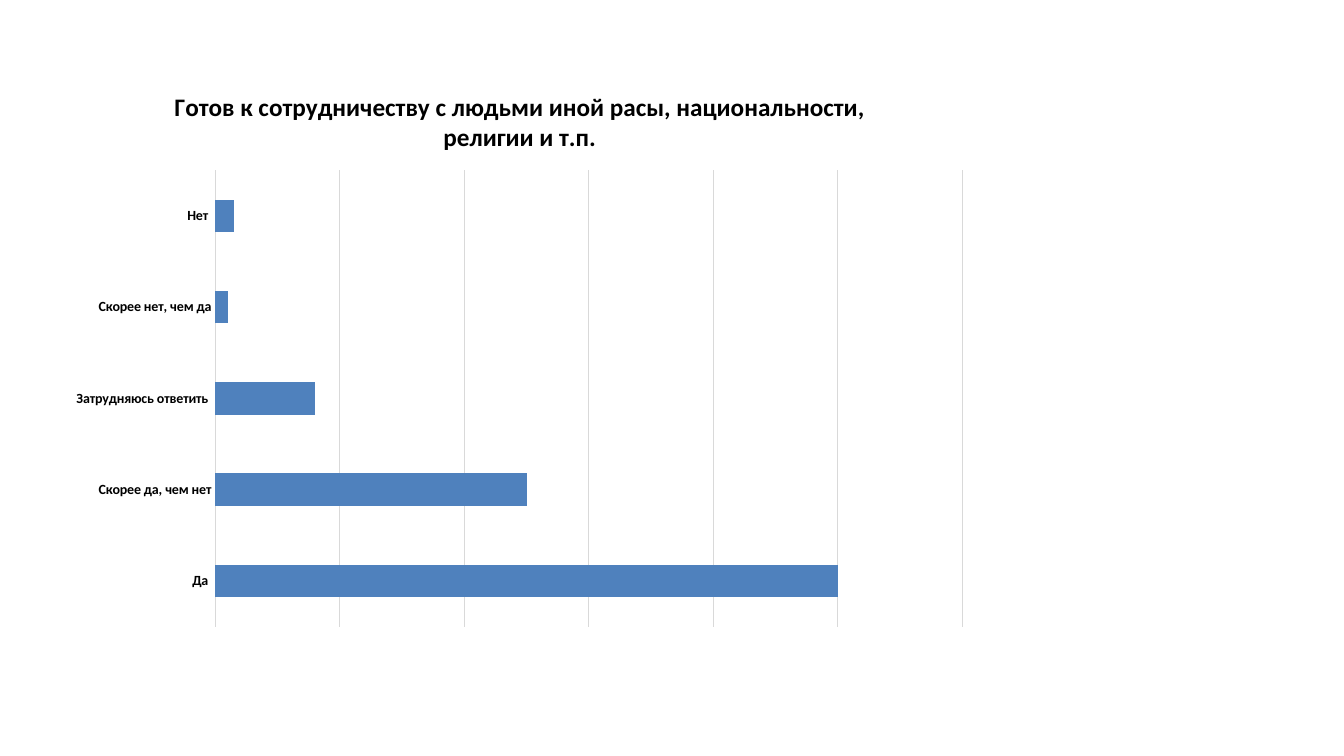
from lxml import etree
from pptx import Presentation
from pptx.chart.data import CategoryChartData
from pptx.dml.color import RGBColor
from pptx.enum import chart as ch
from pptx.oxml import ns
from pptx.util import Inches, Pt

FONT = "Calibri"
BLACK = RGBColor(0x00, 0x00, 0x00)
GRID_GREY = RGBColor(0xD9, 0xD9, 0xD9)
BAR_BLUE = RGBColor(0x4F, 0x81, 0xBD)

QUESTION = ("Готов к сотрудничеству с людьми иной расы, национальности, "
            "религии и т.п.")
ANSWERS = {
    "Да ": 100,
    "Скорее да, чем нет": 50,
    "Затрудняюсь ответить ": 16,
    "Скорее нет, чем да": 2,
    "Нет ": 3,
}


def style_font(font, size, bold=False):
    font.name = FONT
    font.size = Pt(size)
    font.bold = bold
    font.color.rgb = BLACK


def style_line(line):
    line.color.rgb = GRID_GREY
    line.width = Pt(0.75)


def place_plot(chart, x, y, w, h):
    """Fix the inner plot area, in fractions of the chart's size."""
    plot_area = chart.element.find(".//" + ns.qn("c:plotArea"))
    for old in plot_area.findall(ns.qn("c:layout")):
        plot_area.remove(old)
    layout = etree.Element(ns.qn("c:layout"))
    manual = etree.SubElement(layout, ns.qn("c:manualLayout"))
    settings = {"layoutTarget": "inner", "xMode": "edge", "yMode": "edge",
                "x": x, "y": y, "w": w, "h": h}
    for tag, value in settings.items():
        etree.SubElement(manual, ns.qn("c:" + tag)).set("val", str(value))
    plot_area.insert(0, layout)


def add_title(chart, wording):
    chart.has_title = True
    run = chart.chart_title.text_frame.paragraphs[0].add_run()
    run.text = wording
    style_font(run.font, 18, bold=True)
    chart.chart_title.include_in_layout = False


def style_axes(chart):
    answers = chart.category_axis
    answers.major_tick_mark = ch.XL_TICK_MARK.NONE
    answers.minor_tick_mark = ch.XL_TICK_MARK.NONE
    answers.has_major_gridlines = False
    style_font(answers.tick_labels.font, 10, bold=True)
    style_line(answers.format.line)

    votes = chart.value_axis
    votes.minimum_scale, votes.maximum_scale, votes.major_unit = 0, 120, 20
    votes.has_major_gridlines = True
    style_line(votes.major_gridlines.format.line)
    votes.visible = False


def add_answer_chart(slide):
    survey = CategoryChartData()
    survey.categories = list(ANSWERS)
    survey.add_series("Series 1", list(ANSWERS.values()))
    chart = slide.shapes.add_chart(
        ch.XL_CHART_TYPE.BAR_CLUSTERED, Inches(0.58), Inches(0.67),
        Inches(9.15), Inches(5.66), survey).chart
    style_font(chart.font, 10)
    chart.has_legend = False
    add_title(chart, QUESTION)
    style_axes(chart)
    place_plot(chart, 0.17, 0.18, 0.81, 0.8)

    # Bars
    bars = chart.plots[0]
    bars.gap_width = 182
    bars.vary_by_categories = False
    fill = bars.series[0].format.fill
    fill.solid()
    fill.fore_color.rgb = BAR_BLUE


def main():
    prs = Presentation()
    prs.slide_width, prs.slide_height = Inches(13.33), Inches(7.5)
    slide = prs.slides.add_slide(prs.slide_layouts[6])
    add_answer_chart(slide)
    prs.save("out.pptx")


if __name__ == "__main__":
    main()
